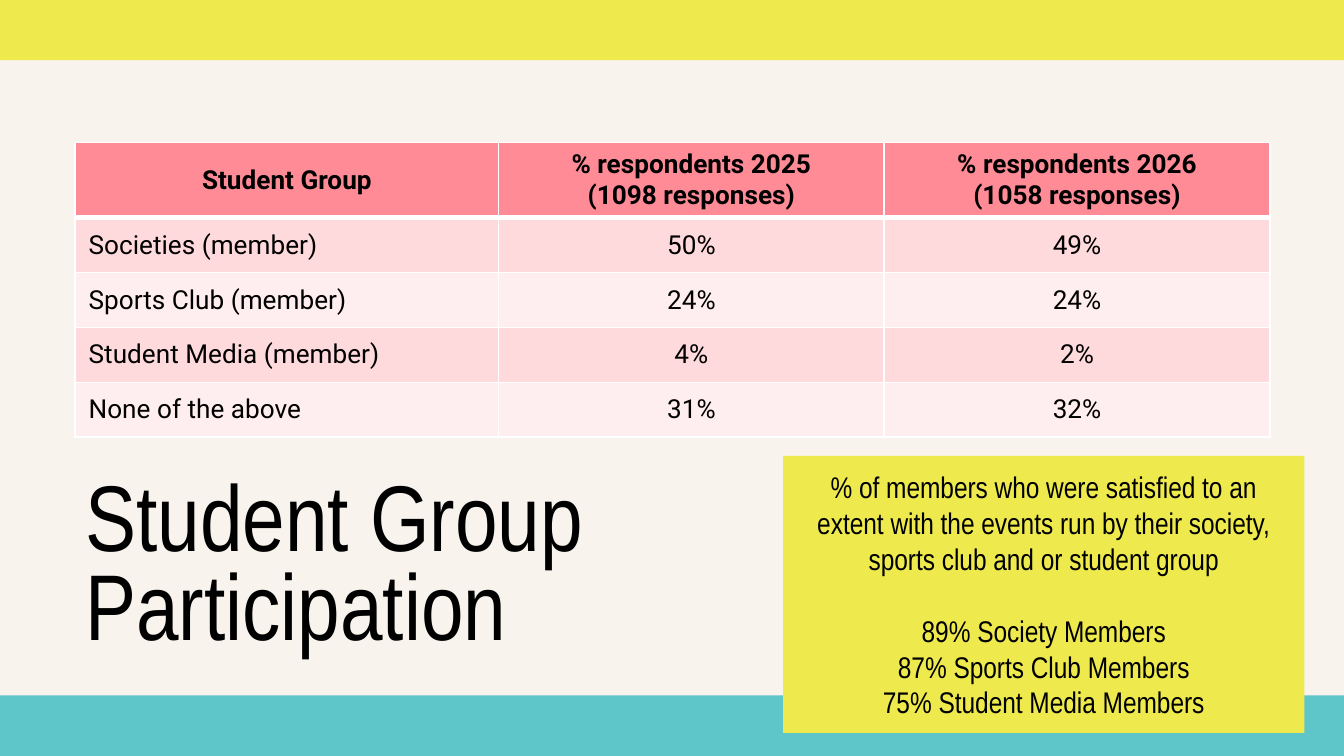
from dataclasses import dataclass

from lxml.etree import SubElement
from pptx import Presentation
from pptx.dml.color import RGBColor
from pptx.enum.shapes import MSO_SHAPE as Shape
from pptx.enum.text import MSO_ANCHOR as Anchor, PP_ALIGN as Align
from pptx.oxml.ns import qn
from pptx.util import Pt


@dataclass(frozen=True)
class Theme:
    background: str = "F8F3EC"
    yellow: str = "EEEA4D"
    teal: str = "5EC6C9"
    header: str = "FF8B96"
    odd_row: str = "FFDADD"
    even_row: str = "FFEEEF"
    border: str = "FFFFFF"
    text: str = "000000"
    display_font: str = "Arial Narrow"
    table_font: str = "Roboto"
    title_size: float = 50
    callout_size: float = 16
    table_size: float = 14


@dataclass(frozen=True)
class Box:
    left: float
    top: float
    width: float
    height: float

    def place(self):
        return Pt(self.left), Pt(self.top), Pt(self.width), Pt(self.height)


THEME = Theme()
SLIDE_WIDTH, SLIDE_HEIGHT = 720, 405
BAND_HEIGHT = 33

ROWS = [
    ["Student Group", "% respondents 2025\n(1098 responses)", "% respondents 2026\n(1058 responses)"],
    ["Societies (member)", "50%", "49%"],
    ["Sports Club (member)", "24%", "24%"],
    ["Student Media (member)", "4%", "2%"],
    ["None of the above", "31%", "32%"],
]
SATISFACTION_INTRO = (
    "% of members who were satisfied to an extent with the events run by "
    "their society, sports club and or student group"
)
SATISFACTION = ["89% Society Members", "87% Sports Club Members", "75% Student Media Members"]


def color(value):
    return RGBColor.from_string(value)


def write(frame, lines, font, size, align, bold=False):
    for index, line in enumerate(lines):
        paragraph = frame.paragraphs[0] if index == 0 else frame.add_paragraph()
        paragraph.alignment = align
        run = paragraph.add_run()
        run.text = line
        run.font.name = font
        run.font.size = Pt(size)
        run.font.bold = bold
        run.font.color.rgb = color(THEME.text)


def add_block(slide, box, fill):
    block = slide.shapes.add_shape(Shape.RECTANGLE, *box.place())
    block.shadow.inherit = False
    block.fill.solid()
    block.fill.fore_color.rgb = color(fill)
    block.line.fill.background()
    return block


def set_title(slide, box, text):
    title = slide.shapes.title
    title.left, title.top, title.width, title.height = box.place()
    frame = title.text_frame
    frame.word_wrap = True
    frame.vertical_anchor = Anchor.TOP
    frame.margin_left = frame.margin_right = Pt(5.4)
    frame.margin_top = frame.margin_bottom = Pt(2.7)
    write(frame, [text], THEME.display_font, THEME.title_size, Align.LEFT)
    frame.paragraphs[0].line_spacing = 0.8


def set_borders(cell, widths):
    properties = cell._tc.get_or_add_tcPr()
    for side in ("L", "R", "T", "B"):
        line = SubElement(properties, qn(f"a:ln{side}"), w=str(Pt(widths.get(side, 1))))
        fill = SubElement(line, qn("a:solidFill"))
        SubElement(fill, qn("a:srgbClr"), val=THEME.border)


def add_participation_table(slide, box, rows):
    table = slide.shapes.add_table(len(rows), len(rows[0]), *box.place()).table
    first_width, header_height = 226.8, 39.8
    other_width = (box.width - first_width) / (len(rows[0]) - 1)
    body_height = (box.height - header_height) / (len(rows) - 1)
    for index, column in enumerate(table.columns):
        column.width = Pt(first_width if index == 0 else other_width)
    for index, row in enumerate(table.rows):
        row.height = Pt(header_height if index == 0 else body_height)

    for row_index, values in enumerate(rows):
        is_header = row_index == 0
        body_fill = THEME.odd_row if row_index % 2 else THEME.even_row
        heavy_sides = {0: {"B": 3}, 1: {"T": 3}}.get(row_index, {})
        for column_index, value in enumerate(values):
            cell = table.cell(row_index, column_index)
            set_borders(cell, heavy_sides)
            cell.fill.solid()
            cell.fill.fore_color.rgb = color(THEME.header if is_header else body_fill)
            cell.vertical_anchor = Anchor.MIDDLE
            align = Align.CENTER if is_header or column_index else Align.LEFT
            write(cell.text_frame, value.split("\n"), THEME.table_font,
                  THEME.table_size, align, is_header)


def add_satisfaction_callout(slide, box, intro, results):
    frame = add_block(slide, box, THEME.yellow).text_frame
    frame.word_wrap = True
    frame.vertical_anchor = Anchor.MIDDLE
    write(frame, [intro, *results], THEME.display_font, THEME.callout_size, Align.CENTER)
    frame.paragraphs[1].space_before = Pt(19.2)


def build_participation_slide(presentation):
    slide = presentation.slides.add_slide(presentation.slide_layouts[5])
    slide.background.fill.solid()
    slide.background.fill.fore_color.rgb = color(THEME.background)
    add_block(slide, Box(0, -0.7, SLIDE_WIDTH, BAND_HEIGHT), THEME.yellow)
    add_block(slide, Box(0, SLIDE_HEIGHT - BAND_HEIGHT + 0.5, SLIDE_WIDTH, BAND_HEIGHT), THEME.teal)
    set_title(slide, Box(40.3, 254.2, 360, 102.2), "Student Group Participation")
    add_participation_table(slide, Box(40.3, 76.3, 640, 157.4), ROWS)
    add_satisfaction_callout(slide, Box(419.6, 244.2, 279.2, 148.5), SATISFACTION_INTRO, SATISFACTION)


def main():
    presentation = Presentation()
    presentation.slide_width = Pt(SLIDE_WIDTH)
    presentation.slide_height = Pt(SLIDE_HEIGHT)
    build_participation_slide(presentation)
    presentation.save("out.pptx")


if __name__ == "__main__":
    main()
